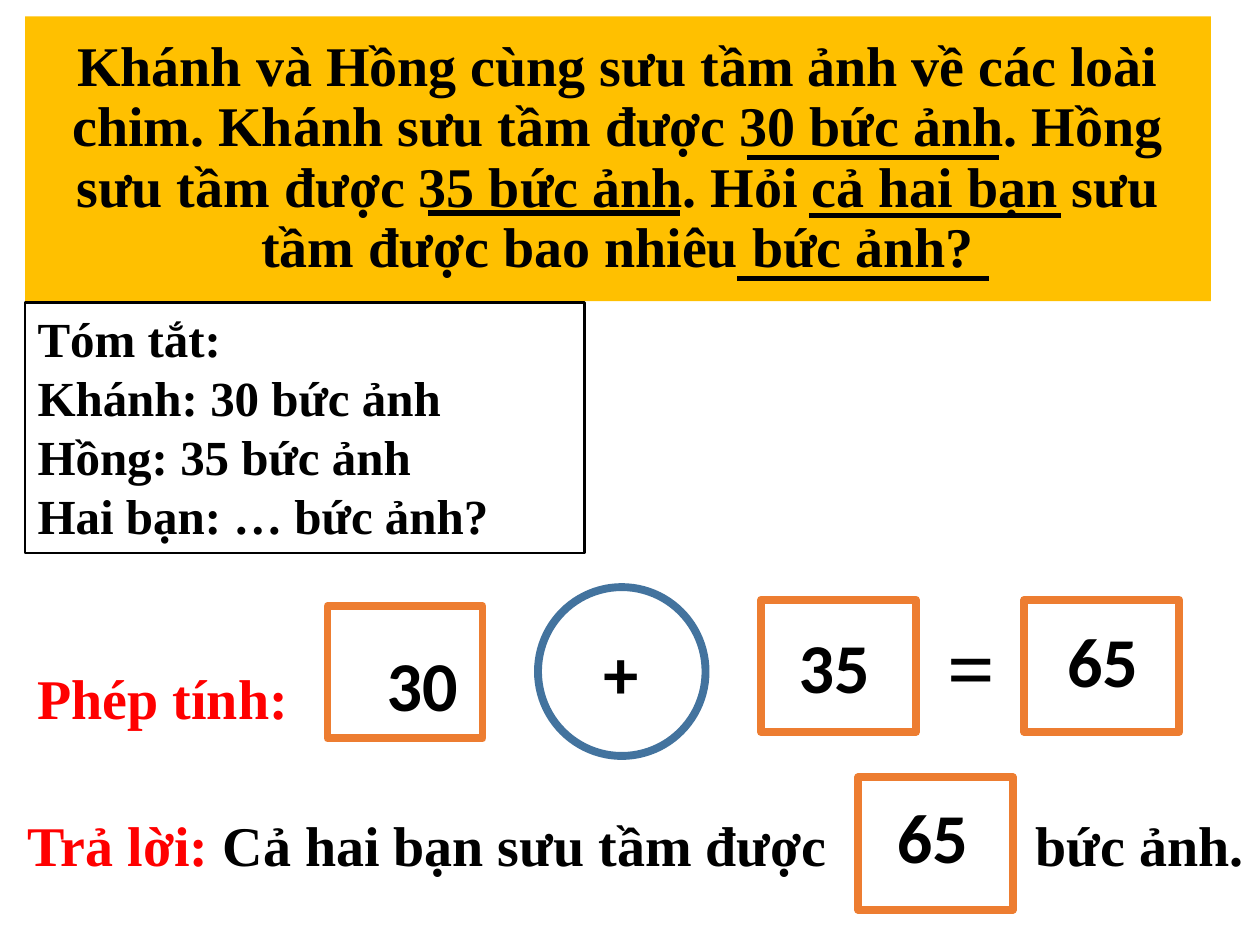
from pptx import Presentation
from pptx.dml.color import RGBColor
from pptx.enum.shapes import MSO_CONNECTOR, MSO_SHAPE
from pptx.enum.text import MSO_ANCHOR, MSO_AUTO_SIZE, PP_ALIGN
from pptx.util import Inches, Pt
from lxml import etree

RECT, OVAL = MSO_SHAPE.RECTANGLE, MSO_SHAPE.OVAL
LINE = MSO_CONNECTOR.STRAIGHT
MIDDLE, TOP = MSO_ANCHOR.MIDDLE, MSO_ANCHOR.TOP
CENTER, LEFT = PP_ALIGN.CENTER, PP_ALIGN.LEFT
GROW = MSO_AUTO_SIZE.SHAPE_TO_FIT_TEXT
DRAWING_NS = "http://schemas.openxmlformats.org/drawingml/2006/main"

COLORS = {"gold": "FFC000", "orange": "ED7D31", "blue": "43739E",
          "red": "FF0000", "black": "000000"}
SERIF, SANS = "Times New Roman", "Calibri"

# Content
PROBLEM = ("Khánh và Hồng cùng sưu tầm ảnh về các loài chim. "
           "Khánh sưu tầm được 30 bức ảnh. Hồng sưu tầm được 35 bức ảnh. "
           "Hỏi cả hai bạn sưu tầm được bao nhiêu bức ảnh?")
SUMMARY = ["Tóm tắt:", "Khánh: 30 bức ảnh", "Hồng: 35 bức ảnh",
           "Hai bạn: … bức ảnh?"]
CALCULATION = "Phép tính:"
ANSWER = [("Trả lời: ", "red"), ("Cả hai bạn sưu tầm được", "black")]
ANSWER_UNIT = "bức ảnh."

# Layout in inches
MARGIN = 0.2
PROBLEM_AREA = (MARGIN, 0.13, 9.41, 2.26)
SUMMARY_AREA = (MARGIN, 2.4, 4.44, 1.99)
CALCULATION_AREA = (MARGIN, 5.22, 2.4, 0.64)
ANSWER_TOP, ANSWER_HEIGHT = 6.38, 0.64
BOX_SIZE = (1.23, 1.05)
NUMBER_SIZE = (0.92, 0.77)
# number, box corner, number corner
NUMBERS = [("30", (2.6, 4.81), (2.97, 5.04)),
           ("35", (6.04, 4.76), (6.24, 4.9)),
           ("65", (8.13, 4.76), (8.37, 4.85)),
           ("65", (6.81, 6.17), (7.02, 6.25))]
PLUS_CIRCLE = (4.27, 4.66, 1.33, 1.34)
PLUS_AREA = (4.69, 4.95, 0.47, 0.77)
EQUALS_AREA = (7.42, 4.83, 0.6, 0.91)
UNDERLINE_LENGTH = 2
UNDERLINES = [(5.93, 1.25), (3.4, 1.69), (6.42, 1.71), (5.85, 2.21)]

presentation = Presentation()
presentation.slide_width, presentation.slide_height = Inches(10), Inches(7.5)
slide = presentation.slides.add_slide(presentation.slide_layouts[6])


def color(key):
    return RGBColor.from_string(COLORS[key])


def add_outline(kind, area, fill=None, line=None, width=4.5):
    shape = slide.shapes.add_shape(kind, *map(Inches, area))
    shape.shadow.inherit = False
    if fill:
        shape.fill.solid()
        shape.fill.fore_color.rgb = color(fill)
    else:
        shape.fill.background()
    if line:
        shape.line.color.rgb = color(line)
        shape.line.width = Pt(width)
    else:
        shape.line.fill.background()
    return shape


def write(shape, paragraphs, size, font=SERIF, anchor=TOP, align=LEFT):
    """Each paragraph is a list of (text, color key) runs."""
    frame = shape.text_frame
    frame.word_wrap = True
    frame.vertical_anchor = anchor
    for index, runs in enumerate(paragraphs):
        paragraph = frame.add_paragraph() if index else frame.paragraphs[0]
        paragraph.alignment = align
        for text, key in runs:
            run = paragraph.add_run()
            run.text = text
            run.font.name, run.font.size, run.font.bold = font, Pt(size), True
            run.font.color.rgb = color(key)
    return frame


def add_label(area, runs, size, font=SERIF):
    label = slide.shapes.add_textbox(*map(Inches, area))
    write(label, [runs], size, font).auto_size = GROW


# Problem statement
problem = add_outline(RECT, PROBLEM_AREA, fill="gold")
statement = write(problem, [[(PROBLEM, "black")]], 32, anchor=MIDDLE, align=CENTER)
statement.paragraphs[0].line_spacing = 0.9

# Underlined key facts
for left, top in UNDERLINES:
    underline = slide.shapes.add_connector(
        LINE, *map(Inches, (left, top, left + UNDERLINE_LENGTH, top)))
    underline.line.color.rgb = color("black")
    underline.line.width = Pt(3)
    etree.SubElement(underline._element.spPr, f"{{{DRAWING_NS}}}effectLst")

# Summary
summary = add_outline(RECT, SUMMARY_AREA, line="black", width=1.5)
write(summary, [[(row, "black")] for row in SUMMARY], 28).auto_size = GROW

# Calculation and answer sentences
add_label(CALCULATION_AREA, [(CALCULATION, "red")], 32)
add_label((0.12, ANSWER_TOP, 6.69, ANSWER_HEIGHT), ANSWER, 32)
add_label((8.12, ANSWER_TOP, 1.88, ANSWER_HEIGHT), [(ANSWER_UNIT, "black")], 32)

# Numbers and operators
add_outline(OVAL, PLUS_CIRCLE, line="blue")
add_label(PLUS_AREA, [("+", "black")], 40, SANS)
add_label(EQUALS_AREA, [("=", "black")], 48)
for number, box_corner, number_corner in NUMBERS:
    add_outline(RECT, box_corner + BOX_SIZE, line="orange")
    add_label(number_corner + NUMBER_SIZE, [(number, "black")], 40, SANS)

presentation.save("out.pptx")
